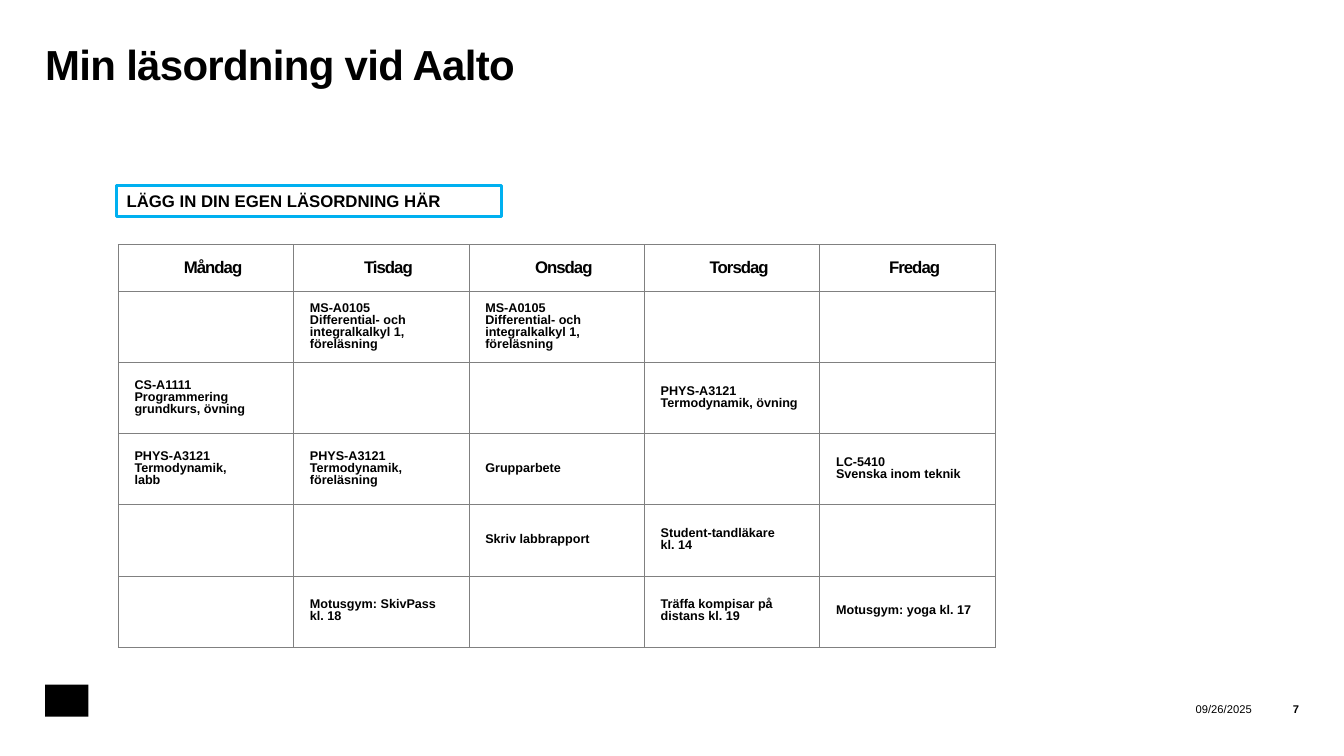
from lxml.etree import SubElement
from pptx import Presentation
from pptx.dml.color import RGBColor
from pptx.enum.shapes import MSO_SHAPE
from pptx.enum.text import MSO_ANCHOR, PP_ALIGN
from pptx.oxml.ns import qn
from pptx.util import Cm, Pt

# Content
TITLE = "Min läsordning vid Aalto"
PROMPT = "LÄGG IN DIN EGEN LÄSORDNING HÄR"
DATE, NUMBER = "09/26/2025", "7"
DAYS = ["Måndag", "Tisdag", "Onsdag", "Torsdag", "Fredag"]
CALCULUS = ["MS-A0105", "Differential- och", "integralkalkyl 1,\nföreläsning"]
# One row per time slot: day index -> paragraphs
SLOTS = [
    {1: CALCULUS, 2: CALCULUS},
    {0: ["CS-A1111", "Programmering", "grundkurs, övning"],
     3: ["PHYS-A3121", "Termodynamik, övning"]},
    {0: ["PHYS-A3121", "Termodynamik,\nlabb"],
     1: ["PHYS-A3121", "Termodynamik, föreläsning"],
     2: ["Grupparbete"],
     4: ["LC-5410", "Svenska inom teknik"]},
    {2: ["Skriv labbrapport"], 3: ["Student-tandläkare\nkl. 14"]},
    {1: ["Motusgym: SkivPass\nkl. 18"],
     3: ["Träffa kompisar på distans kl. 19"],
     4: ["Motusgym: yoga kl. 17"]},
]

COLORS = {"text": "000000", "paper": "FFFFFF", "grid": "808080", "accent": "00B0F0"}
FONT = "Arial"
COLUMN_WIDTH, HEADER_HEIGHT, SLOT_HEIGHT = 4.42, 1.19, 1.79


def color(name):
    return RGBColor.from_string(COLORS[name])


def write(frame, paragraphs, size, bold=True, align=PP_ALIGN.LEFT,
          line_spacing=None, tracking=0):
    frame.text = paragraphs[0]
    for text in paragraphs[1:]:
        frame.add_paragraph().text = text
    for paragraph in frame.paragraphs:
        paragraph.alignment = align
        if line_spacing:
            paragraph.line_spacing = line_spacing
        for run in paragraph.runs:
            run.font.name, run.font.size, run.font.bold = FONT, Pt(size), bold
            run.font.color.rgb = color("text")
            if tracking:
                run._r.get_or_add_rPr().set("spc", str(round(tracking * 100)))


def add_label(left, top, width, height, text, size, anchor=MSO_ANCHOR.MIDDLE, **style):
    box = slide.shapes.add_textbox(Cm(left), Cm(top), Cm(width), Cm(height))
    frame = box.text_frame
    frame.word_wrap = True
    frame.vertical_anchor = anchor
    frame.margin_left = frame.margin_right = frame.margin_top = frame.margin_bottom = 0
    write(frame, [text], size, **style)


def add_box(left, top, width, height, fill):
    shape = slide.shapes.add_shape(MSO_SHAPE.RECTANGLE, Cm(left), Cm(top), Cm(width), Cm(height))
    shape.shadow.inherit = False
    shape.fill.solid()
    shape.fill.fore_color.rgb = color(fill)
    shape.line.fill.background()
    return shape


def format_cell(cell, left_margin):
    cell.vertical_anchor = MSO_ANCHOR.MIDDLE
    cell.margin_left = Cm(left_margin)
    cell.margin_right = cell.margin_top = cell.margin_bottom = 0
    properties = cell._tc.get_or_add_tcPr()
    for side in ("a:lnL", "a:lnR", "a:lnT", "a:lnB"):
        border = SubElement(properties, qn(side), w=str(Pt(0.5)))
        SubElement(SubElement(border, qn("a:solidFill")), qn("a:srgbClr"), val=COLORS["grid"])
    cell.fill.background()


presentation = Presentation()
presentation.slide_width, presentation.slide_height = Cm(33.87), Cm(19.05)
slide = presentation.slides.add_slide(presentation.slide_layouts[6])

# Plain block in the corner, title and footer
add_box(1.14, 17.25, 1.09, 0.81, "text")
add_label(1.14, 1.12, 31.6, 3, TITLE, 30, anchor=MSO_ANCHOR.TOP,
          line_spacing=0.9, tracking=-0.5)
add_label(28.35, 17.65, 3.2, 0.41, DATE, 8, bold=False, align=PP_ALIGN.RIGHT)
add_label(31.55, 17.65, 1.19, 0.41, NUMBER, 8, align=PP_ALIGN.RIGHT)

# Timetable
table = slide.shapes.add_table(
    len(SLOTS) + 1, len(DAYS), Cm(2.98), Cm(6.16), Cm(COLUMN_WIDTH * len(DAYS)),
    Cm(HEADER_HEIGHT + SLOT_HEIGHT * len(SLOTS))).table
table.first_row = table.horz_banding = False
for column in table.columns:
    column.width = Cm(COLUMN_WIDTH)
for index, row in enumerate(table.rows):
    row.height = Cm(SLOT_HEIGHT if index else HEADER_HEIGHT)

for day, name in enumerate(DAYS):
    header = table.cell(0, day)
    format_cell(header, 0.36)
    write(header.text_frame, [name], 12, align=PP_ALIGN.CENTER, tracking=-0.7)
    for row_index, slot in enumerate(SLOTS, start=1):
        cell = table.cell(row_index, day)
        format_cell(cell, 0.41)
        if day in slot:
            write(cell.text_frame, slot[day], 9, line_spacing=0.85)

# Prompt box
prompt = add_box(2.94, 4.67, 9.7, 0.78, "paper")
prompt.line.color.rgb = color("accent")
prompt.line.width = Pt(2)
prompt.text_frame.word_wrap = True
write(prompt.text_frame, [PROMPT], 12)

presentation.save("out.pptx")
